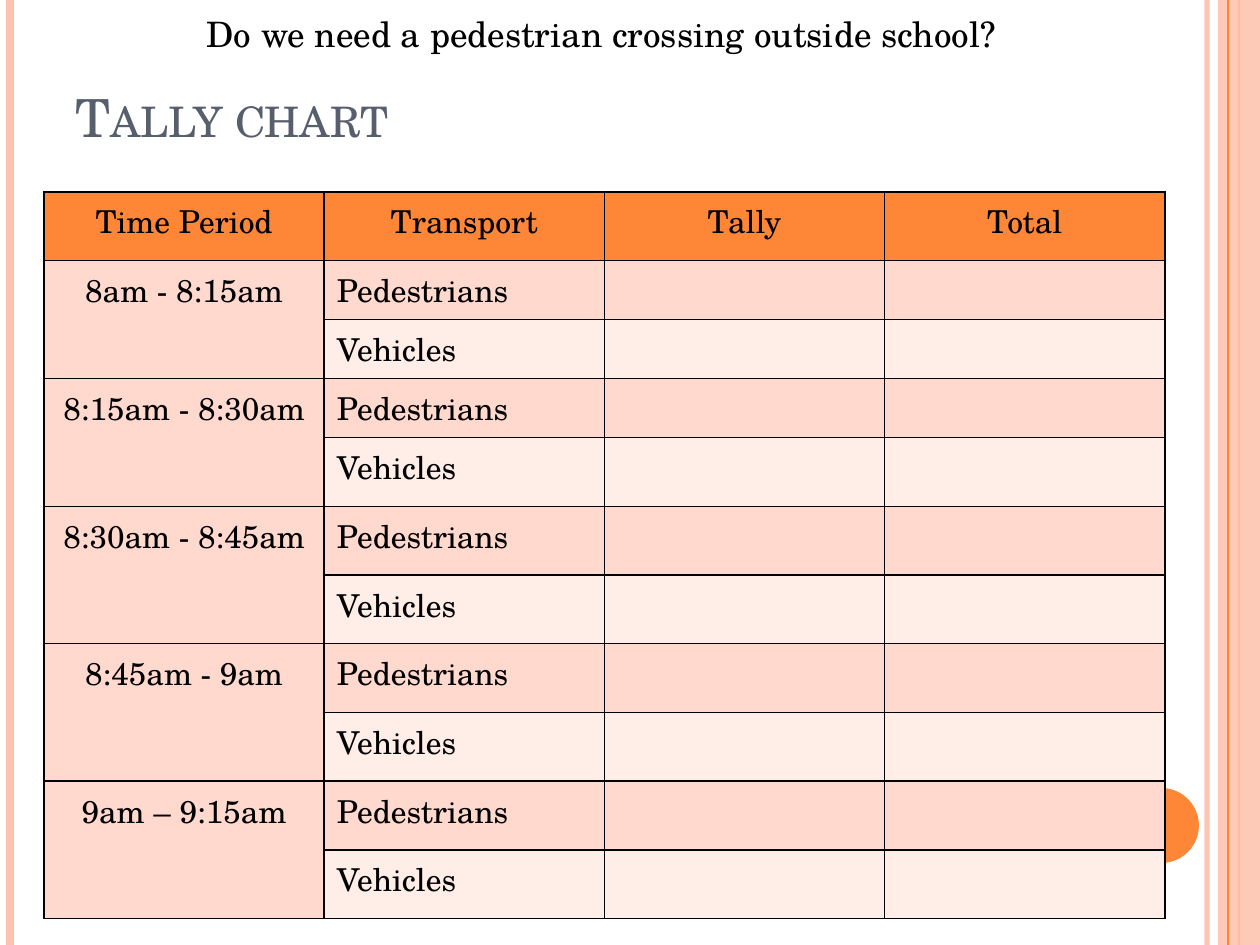
from lxml import etree
from pptx import Presentation
from pptx import util as u
from pptx.dml.color import RGBColor
from pptx.enum import shapes, text
from pptx.oxml.ns import qn

FONT = "TeX Gyre Schola"
ORANGE, PEACH = "FE8637", "FEC3AE"
BAND_DARK, BAND_LIGHT = "FFD9CE", "FFEDE8"
BLACK, SLATE = "000000", "575F6D"
HEADINGS = ["Time Period", "Transport", "Tally", "Total"]
PERIODS = ["8am - 8:15am", "8:15am - 8:30am", "8:30am - 8:45am",
           "8:45am - 9am", "9am – 9:15am"]
TRANSPORT = [("Pedestrians", BAND_DARK), ("Vehicles", BAND_LIGHT)]


def px(length):
    return u.Emu(round(length * 914400 / 126))


def paint(color_format, color, opacity=100):
    color_format.rgb = RGBColor.from_string(color)
    if opacity < 100:
        node = color_format._xFill.find(qn("a:srgbClr"))
        etree.SubElement(node, qn("a:alpha"), val=str(opacity * 1000))


def fill(target, color, opacity=100):
    target.fill.solid()
    paint(target.fill.fore_color, color, opacity)


def write(frame, words, size=18, color=BLACK, align=text.PP_ALIGN.LEFT, small_caps=False):
    para = frame.paragraphs[0]
    para.alignment = align
    span = para.add_run()
    span.text = words
    span.font.name = FONT
    span.font.size = u.Pt(size)
    paint(span.font.color, color)
    if small_caps:
        span.font._element.set("cap", "small")


def add_text(page, left, top, width, height, words, anchor, **style):
    frame = page.shapes.add_textbox(px(left), px(top), px(width), px(height)).text_frame
    frame.word_wrap = True
    frame.vertical_anchor = anchor
    write(frame, words, **style)


def add_stripe(page, x, top, height, color, weight, opacity=100):
    stripe = page.shapes.add_connector(
        shapes.MSO_CONNECTOR.STRAIGHT, px(x), px(top), px(x), px(top + height))
    stripe.line.width = u.Pt(weight)
    stripe.line.fill.solid()
    paint(stripe.line.fill.fore_color, color, opacity)
    etree.SubElement(stripe._element.spPr, qn("a:effectLst"))


def add_block(page, kind, left, top, width, height, color, opacity=100):
    block = page.shapes.add_shape(kind, px(left), px(top), px(width), px(height))
    block.shadow.inherit = False
    block.line.fill.background()
    fill(block, color, opacity)


def add_decoration(page, left, top, width, height):
    right = left + width
    add_stripe(page, right - 53, top, height, PEACH, 3, 93)
    add_stripe(page, left + 10, top, height, PEACH, 4.5)
    add_stripe(page, right - 21, top, height, ORANGE, 1.5)
    add_block(page, shapes.MSO_SHAPE.RECTANGLE, right - 42, top, 42, height, PEACH, 87)
    add_stripe(page, right - 32, top, height, ORANGE, 0.75)
    add_block(page, shapes.MSO_SHAPE.OVAL, right - 136, top + height - 157, 75, 75, ORANGE)


def add_borders(cell):
    properties = cell._tc.get_or_add_tcPr()
    for index, side in enumerate(["lnL", "lnR", "lnT", "lnB"]):
        line = etree.Element(qn("a:" + side), w=str(u.Pt(1)))
        solid = etree.SubElement(line, qn("a:solidFill"))
        etree.SubElement(solid, qn("a:srgbClr"), val=BLACK)
        properties.insert(index, line)


def style_cell(cell, color, words="", align=text.PP_ALIGN.LEFT):
    fill(cell, color)
    add_borders(cell)
    if words:
        write(cell.text_frame, words, align=align)


def add_tally_table(page, left, top, width, height):
    short_height, short_rows = 59, range(1, 4)
    row_count = 1 + len(PERIODS) * len(TRANSPORT)
    tall_height = (height - short_height * len(short_rows)) / (row_count - len(short_rows))
    table = page.shapes.add_table(
        row_count, len(HEADINGS), px(left), px(top), px(width), px(height)).table
    table.first_row = False
    table.horz_banding = False
    for index, row in enumerate(table.rows):
        row.height = px(short_height if index in short_rows else tall_height)
    for column, heading in enumerate(HEADINGS):
        style_cell(table.cell(0, column), ORANGE, heading, text.PP_ALIGN.CENTER)
    for index, period in enumerate(PERIODS):
        first = 1 + index * len(TRANSPORT)
        for row, (transport, color) in enumerate(TRANSPORT, first):
            style_cell(table.cell(row, 0), BAND_DARK, period if row == first else "",
                       text.PP_ALIGN.CENTER)
            style_cell(table.cell(row, 1), color, transport)
            for column in (2, 3):
                style_cell(table.cell(row, column), color)
        table.cell(first, 0).merge(table.cell(first + len(TRANSPORT) - 1, 0))


def main():
    deck = Presentation()
    deck.slide_width, deck.slide_height = px(1260), px(945)
    page = deck.slides.add_slide(deck.slide_layouts[6])
    add_decoration(page, 0, 0, 1260, 945)
    add_text(page, 63, -4, 1029, 158, "Tally chart", text.MSO_ANCHOR.BOTTOM,
             size=30, color=SLATE, small_caps=True)
    add_tally_table(page, 44, 192, 1121, 727)
    add_text(page, 87, 6, 1029, 672, "Do we need a pedestrian crossing outside school?",
             text.MSO_ANCHOR.TOP, size=20, align=text.PP_ALIGN.CENTER)
    deck.save("out.pptx")


if __name__ == "__main__":
    main()
